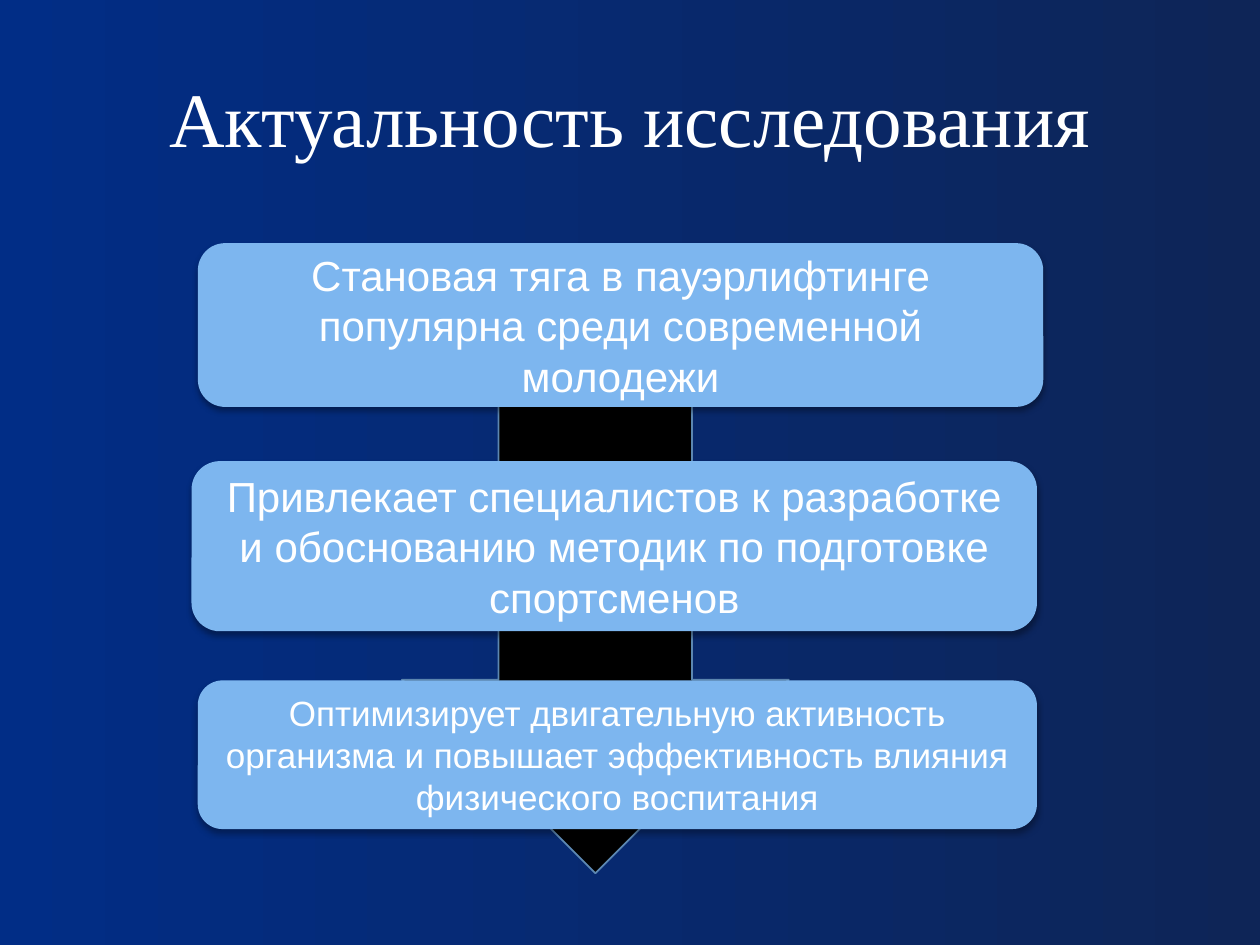
from lxml import etree
from pptx import Presentation, util as u
from pptx.dml.color import RGBColor
from pptx.enum import shapes, text
from pptx.oxml import ns

NAVY = RGBColor(0x01, 0x2D, 0x86)
DUSK = RGBColor(0x0E, 0x25, 0x57)
SKY = RGBColor(0x7D, 0xB6, 0xEF)
STEEL = RGBColor(0x5C, 0x87, 0xB1)
BLACK = RGBColor(0, 0, 0)
WHITE = RGBColor(255, 255, 255)

WIDE, HIGH = 10, 7.5
TITLE = "Актуальность исследования"
# left, top, width, height, text size, wording
CARDS = [
    (1.57, 1.93, 6.71, 1.3, 24,
     "Становая тяга в пауэрлифтинге популярна среди современной молодежи"),
    (1.52, 3.66, 6.71, 1.35, 24,
     "Привлекает специалистов к разработке и обоснованию методик "
     "по подготовке спортсменов"),
    (1.57, 5.4, 6.66, 1.18, 20,
     "Оптимизирует двигательную активность организма и повышает "
     "эффективность влияния физического воспитания"),
]


def paint(slide):
    """Fill the background with a left-to-right gradient."""
    fill = slide.background.fill
    fill.gradient()
    fill.gradient_angle = 0
    for stop, tone, place in zip(fill.gradient_stops, (NAVY, DUSK), (0, 1)):
        stop.color.rgb = tone
        stop.position = place


def write(shape, words, size, face):
    frame = shape.text_frame
    frame.word_wrap = True
    frame.vertical_anchor = text.MSO_ANCHOR.MIDDLE
    par = frame.paragraphs[0]
    par.alignment = text.PP_ALIGN.CENTER
    run = par.add_run()
    run.text = words
    for key, value in {"name": face, "size": u.Pt(size)}.items():
        setattr(run.font, key, value)
    run.font.color.rgb = WHITE


def shade(shape):
    """Add a soft shadow straight below the shape."""
    shape.shadow.inherit = False
    effects = shape._element.spPr.find(ns.qn("a:effectLst"))
    outer = etree.SubElement(
        effects, ns.qn("a:outerShdw"), blurRad=str(u.Pt(3.5)),
        dist=str(u.Pt(2.2)), dir="5400000", rotWithShape="0")
    tone = etree.SubElement(outer, ns.qn("a:srgbClr"), val=str(BLACK))
    etree.SubElement(tone, ns.qn("a:alpha"), val="32000")


def block(slide, kind, box, tone):
    shape = slide.shapes.add_shape(kind, *map(u.Inches, box))
    shape.shadow.inherit = False
    shape.fill.solid()
    shape.fill.fore_color.rgb = tone
    return shape


def arrow(slide, box):
    shape = block(slide, shapes.MSO_SHAPE.DOWN_ARROW, box, BLACK)
    shape.line.color.rgb = STEEL
    shape.line.width = u.Pt(1)


def card(slide, *box, size, words):
    shape = block(slide, shapes.MSO_SHAPE.ROUNDED_RECTANGLE, box, SKY)
    shape.line.fill.background()
    shade(shape)
    write(shape, words, size, "Arial")


def head(slide):
    title = slide.shapes.title
    place = {"left": 0.05 * WIDE, "top": 0.04 * HIGH,
             "width": 0.9 * WIDE, "height": HIGH / 6}
    for key, value in place.items():
        setattr(title, key, u.Inches(value))
    write(title, TITLE, 44, "Times New Roman")


def main():
    deck = Presentation()
    deck.slide_width, deck.slide_height = u.Inches(WIDE), u.Inches(HIGH)
    slide = deck.slides.add_slide(deck.slide_layouts[5])
    paint(slide)
    head(slide)
    arrow(slide, (3.19, 1.94, 3.07, 4.99))
    for *box, size, words in CARDS:
        card(slide, *box, size=size, words=words)
    deck.save("out.pptx")


if __name__ == "__main__":
    main()
